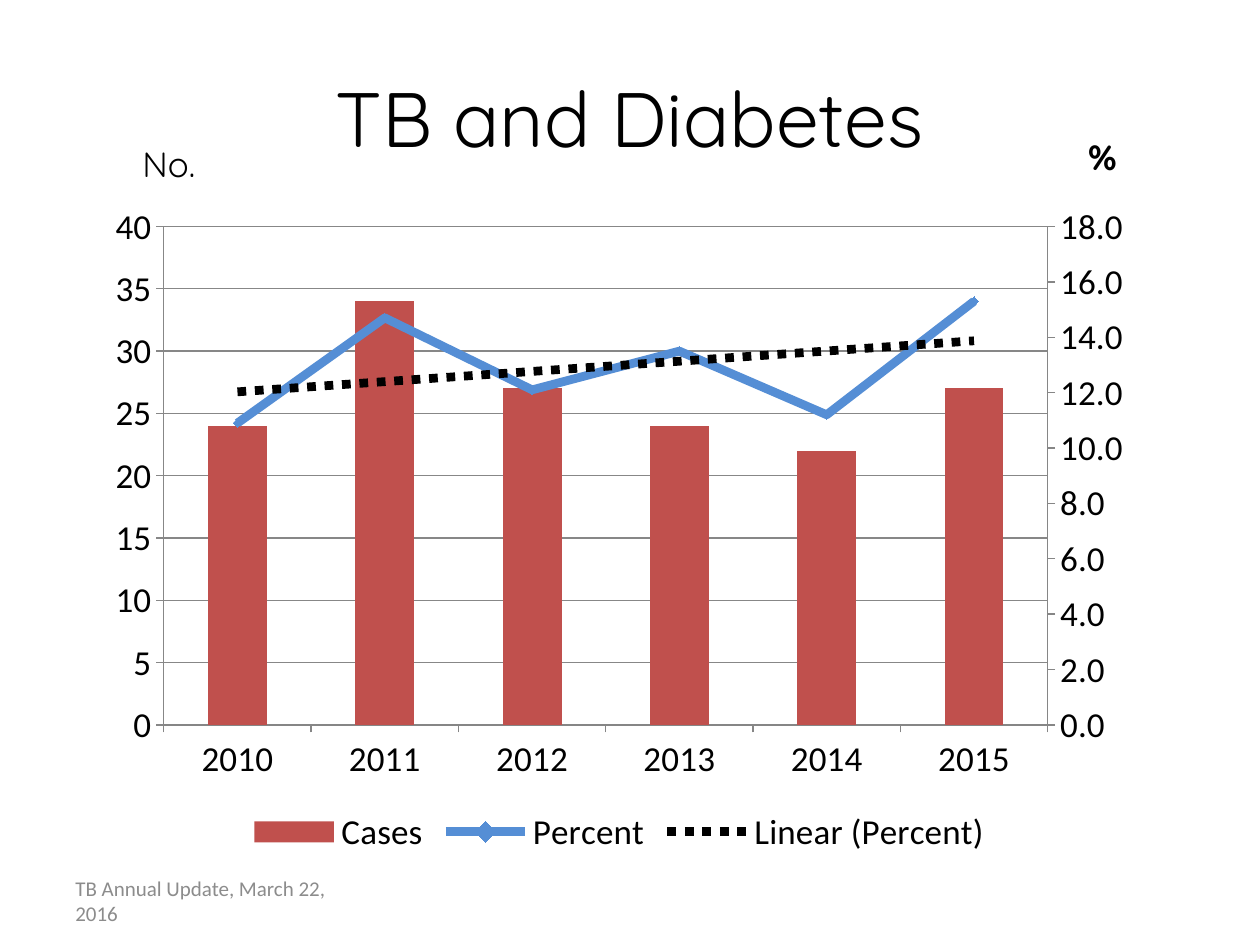
import dataclasses

import pptx
import pptx.chart.axis
import pptx.chart.data
import pptx.dml.color
import pptx.enum.chart
import pptx.enum.text
import pptx.oxml
import pptx.oxml.ns
import pptx.util

PX = 9144
CHART_NS = pptx.oxml.ns.nsdecls("c", "a")


@dataclasses.dataclass(frozen=True)
class Theme:
    heading: str = "Quicksand"
    body: str = "Calibri"
    title_size: int = 44
    label_size: int = 20
    footer_size: int = 12
    line_width: int = 5
    ink: str = "000000"
    muted: str = "8C8C8C"
    axis: str = "868686"
    cases: str = "C0504D"
    percent: str = "558ED5"


THEME = Theme()

LINE_PLOT = f"""<c:lineChart {CHART_NS}>
<c:grouping val="standard"/><c:varyColors val="0"/>
<c:marker val="1"/><c:axId val="50"/><c:axId val="60"/>
</c:lineChart>"""

TREND = f"""<c:trendline {CHART_NS}>
<c:name>Linear (Percent)</c:name>
<c:spPr><a:ln w="{pptx.util.Pt(THEME.line_width)}">
<a:solidFill><a:srgbClr val="{THEME.ink}"/></a:solidFill><a:prstDash val="sysDot"/>
</a:ln></c:spPr>
<c:trendlineType val="linear"/><c:dispRSqr val="0"/><c:dispEq val="0"/>
</c:trendline>"""

RIGHT_AXIS = f"""<c:valAx {CHART_NS}>
<c:axId val="60"/><c:scaling><c:orientation val="minMax"/></c:scaling>
<c:delete val="0"/><c:axPos val="r"/>
<c:numFmt formatCode="#,##0.0" sourceLinked="0"/>
<c:majorTickMark val="out"/><c:minorTickMark val="none"/><c:tickLblPos val="nextTo"/>
<c:crossAx val="50"/><c:crosses val="max"/>
</c:valAx>"""

HIDDEN_AXIS = f"""<c:catAx {CHART_NS}>
<c:axId val="50"/><c:scaling><c:orientation val="minMax"/></c:scaling>
<c:delete val="1"/><c:axPos val="b"/><c:tickLblPos val="nextTo"/>
<c:crossAx val="60"/><c:crosses val="autoZero"/>
</c:catAx>"""


def color(value):
    return pptx.dml.color.RGBColor.from_string(value)


def style_font(font, name, size, tint, bold=False):
    font.name = name
    font.size = pptx.util.Pt(size)
    font.color.rgb = color(tint)
    font.bold = bold


def style_fill(fill, tint):
    fill.solid()
    fill.fore_color.rgb = color(tint)


def to_emu(box):
    return [length * PX for length in box]


def add_title(page, box, text):
    title = page.shapes.title
    title.left, title.top, title.width, title.height = to_emu(box)
    title.text_frame.text = text
    title.text_frame.vertical_anchor = pptx.enum.text.MSO_ANCHOR.MIDDLE
    para = title.text_frame.paragraphs[0]
    para.alignment = pptx.enum.text.PP_ALIGN.CENTER
    style_font(para.font, THEME.heading, THEME.title_size, THEME.ink)


def add_text(page, box, text, wrap):
    frame = page.shapes.add_textbox(*to_emu(box)).text_frame
    frame.word_wrap = wrap
    frame.text = text
    return frame


def add_unit(page, box, text, bold=False):
    para = add_text(page, box, text, False).paragraphs[0]
    para.alignment = pptx.enum.text.PP_ALIGN.CENTER
    style_font(para.font, THEME.heading, THEME.label_size, THEME.ink, bold)


def add_footer(page, box, text):
    frame = add_text(page, box, text, True)
    frame.vertical_anchor = pptx.enum.text.MSO_ANCHOR.MIDDLE
    style_font(frame.paragraphs[0].font, THEME.body, THEME.footer_size, THEME.muted)


def move_to_right_axis(chart):
    bars = chart.element.xpath(".//c:barChart")[0]
    percent = bars.xpath("c:ser")[1]
    for flag in percent.xpath("c:invertIfNegative"):
        percent.remove(flag)
    percent.xpath("c:cat")[0].addprevious(pptx.oxml.parse_xml(TREND))
    lines = pptx.oxml.parse_xml(LINE_PLOT)
    lines.xpath("c:varyColors")[0].addnext(percent)
    bars.addnext(lines)
    left_axis = chart.element.xpath(".//c:valAx")[0]
    right_axis = pptx.oxml.parse_xml(RIGHT_AXIS)
    left_axis.addnext(right_axis)
    right_axis.addnext(pptx.oxml.parse_xml(HIDDEN_AXIS))
    return pptx.chart.axis.ValueAxis(right_axis)


def style_axis(axis):
    axis.major_tick_mark = pptx.enum.chart.XL_TICK_MARK.OUTSIDE
    style_font(axis.tick_labels.font, THEME.body, THEME.label_size, THEME.ink)
    style_fill(axis.format.line.fill, THEME.axis)


def style_percent(series):
    series.smooth = False
    style_fill(series.format.line.fill, THEME.percent)
    series.format.line.width = pptx.util.Pt(THEME.line_width)
    series.marker.style = pptx.enum.chart.XL_MARKER_STYLE.DIAMOND
    series.marker.size = 5
    style_fill(series.marker.format.fill, THEME.percent)
    style_fill(series.marker.format.line.fill, THEME.percent)


def add_cases_chart(page, box):
    data = pptx.chart.data.CategoryChartData()
    data.categories = [str(year) for year in range(2010, 2016)]
    data.add_series("Cases", (24, 34, 27, 24, 22, 27))
    data.add_series("Percent", (10.9, 14.7, 12.1, 13.5, 11.2, 15.3))
    kind = pptx.enum.chart.XL_CHART_TYPE.COLUMN_CLUSTERED
    chart = page.shapes.add_chart(kind, *to_emu(box), data).chart
    chart.has_title = False
    style_font(chart.font, THEME.body, THEME.label_size, THEME.ink)

    right_axis = move_to_right_axis(chart)
    for axis in (chart.category_axis, chart.value_axis, right_axis):
        style_axis(axis)
    chart.value_axis.has_major_gridlines = True
    style_fill(chart.value_axis.major_gridlines.format.line.fill, THEME.axis)

    columns, lines = chart.plots
    columns.vary_by_categories = False
    columns.gap_width = 150
    style_fill(columns.series[0].format.fill, THEME.cases)
    style_percent(lines.series[0])

    chart.has_legend = True
    chart.legend.position = pptx.enum.chart.XL_LEGEND_POSITION.BOTTOM
    chart.legend.include_in_layout = False
    style_font(chart.legend.font, THEME.body, THEME.label_size, THEME.ink)


def build_diabetes_page(deck):
    page = deck.slides.add_slide(deck.slide_layouts.get_by_name("Title Only"))
    add_title(page, (50, 30, 900, 125), "TB and Diabetes")
    add_unit(page, (101, 108, 66, 44), "No.")
    add_unit(page, (853, 103, 44, 44), "%", bold=True)
    add_cases_chart(page, (75, 152, 833, 531))
    add_footer(page, (50, 695, 233, 40), "TB Annual Update, March 22, 2016")


def main():
    deck = pptx.Presentation()
    deck.slide_width, deck.slide_height = to_emu((1000, 750))
    build_diabetes_page(deck)
    deck.save("out.pptx")


if __name__ == "__main__":
    main()
